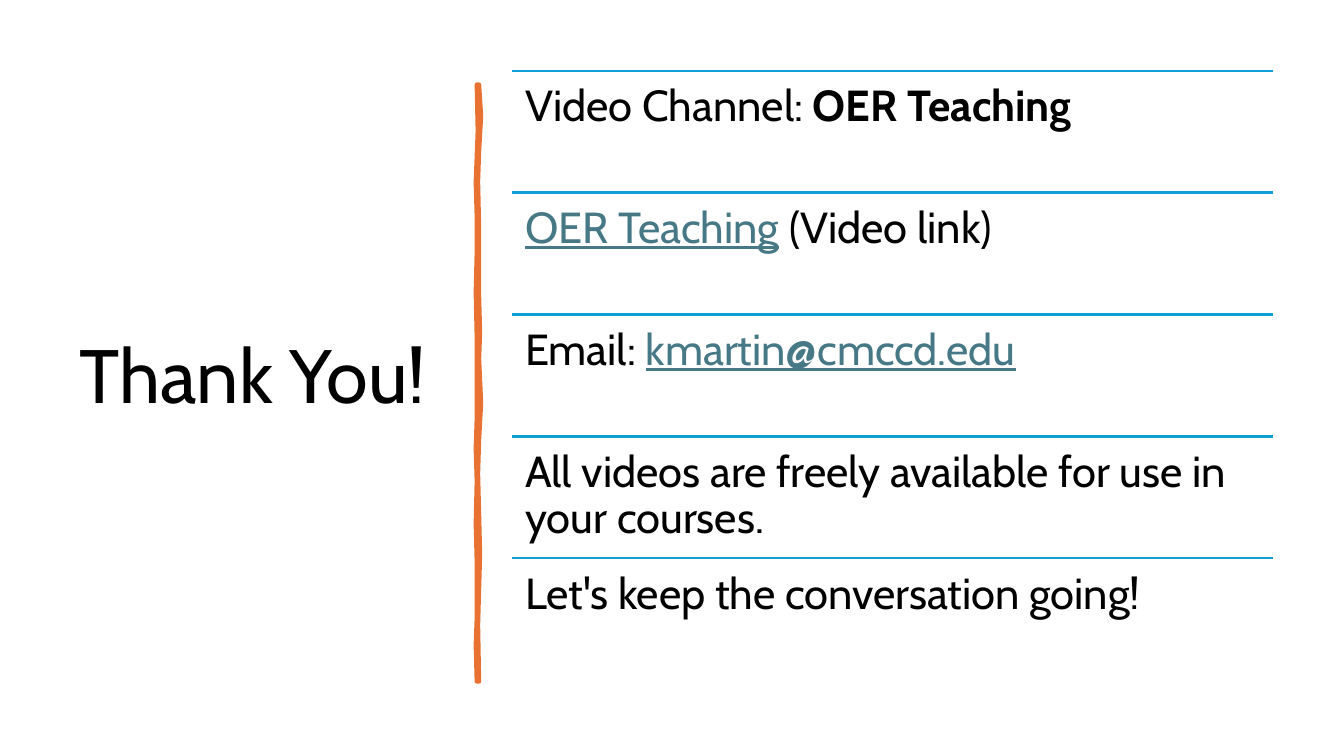
import pptx
import pptx.util
import pptx.dml.color
import pptx.enum.shapes
import pptx.enum.text
import pptx.oxml.ns
import lxml.etree

Inches = pptx.util.Inches
FONT = "Cabin"
BLACK, LINK, BLUE, ORANGE = "000000", "467886", "0F9ED5", "E97132"

# Rows: each is a list of (text, style) pieces
ROWS = [
    [("Video Channel: ", ""), ("OER Teaching", "bold")],
    [("OER Teaching", "link"), (" (Video link)", "")],
    [("Email: ", ""), ("kmartin@cmccd.edu", "link")],
    [("All videos are freely available for use in your courses.", "")],
    [("Let's keep the conversation going!", "")],
]
LEFT, TOP, WIDTH, STEP = 5.08, 0.7, 7.55, 1.21

# Hand-drawn bar: right edge downwards, then left edge upwards
BAR = [
    (4.75, 0.84), (4.77, 1.15), (4.75, 1.5), (4.74, 1.8), (4.75, 2.26),
    (4.75, 2.94), (4.76, 3.3), (4.75, 3.56), (4.77, 4.0), (4.75, 4.36),
    (4.74, 4.7), (4.75, 5.1), (4.76, 5.5), (4.75, 5.84), (4.74, 6.2),
    (4.75, 6.76), (4.73, 6.76), (4.72, 6.4), (4.73, 6.13), (4.73, 5.57),
    (4.72, 5.2), (4.73, 4.77), (4.72, 4.45), (4.73, 4.15), (4.73, 3.35),
    (4.72, 2.9), (4.73, 2.5), (4.73, 2.15), (4.72, 1.81), (4.74, 1.3),
    (4.73, 0.84),
]


def color(code):
    return pptx.dml.color.RGBColor.from_string(code)


def style(run, size, code=BLACK):
    run.font.name = FONT
    run.font.size = pptx.util.Pt(size)
    run.font.color.rgb = color(code)


def add_title(slide, text):
    title = slide.shapes.title
    title.left, title.top = Inches(0.69), Inches(0.7)
    title.width, title.height = Inches(3.74), Inches(6.11)
    frame = title.text_frame
    frame.text = text
    frame.auto_size = pptx.enum.text.MSO_AUTO_SIZE.NONE
    frame.vertical_anchor = pptx.enum.text.MSO_ANCHOR.MIDDLE
    para = frame.paragraphs[0]
    para.alignment = pptx.enum.text.PP_ALIGN.LEFT
    para.line_spacing = 0.9
    style(para.runs[0], 54)


def add_bar(slide):
    points = [(Inches(x), Inches(y)) for x, y in BAR]
    outline = slide.shapes.build_freeform(*points[0])
    outline.add_line_segments(points[1:], close=True)
    bar = outline.convert_to_shape()
    bar.shadow.inherit = False
    bar.fill.solid()
    bar.fill.fore_color.rgb = color(ORANGE)
    bar.line.color.rgb = color(ORANGE)
    bar.line.width = pptx.util.Pt(3.25)
    lxml.etree.SubElement(bar.line._get_or_add_ln(), pptx.oxml.ns.qn("a:round"))


def add_rule(slide, top):
    rule = slide.shapes.add_connector(
        pptx.enum.shapes.MSO_CONNECTOR.STRAIGHT,
        Inches(LEFT), Inches(top), Inches(LEFT + WIDTH), Inches(top))
    rule.line.color.rgb = color(BLUE)
    rule.line.width = pptx.util.Pt(1.5)
    lxml.etree.SubElement(rule._element.spPr, pptx.oxml.ns.qn("a:effectLst"))


def add_row(slide, top, pieces):
    box = slide.shapes.add_textbox(
        Inches(LEFT), Inches(top), Inches(WIDTH), Inches(STEP))
    frame = box.text_frame
    frame.word_wrap = True
    frame.margin_left = frame.margin_right = Inches(0.13)
    frame.margin_top = frame.margin_bottom = Inches(0.13)
    para = frame.paragraphs[0]
    para.line_spacing = 0.9
    for text, kind in pieces:
        run = para.add_run()
        run.text = text
        style(run, 31, LINK if kind == "link" else BLACK)
        run.font.bold = kind == "bold"
        run.font.underline = kind == "link"


def main():
    deck = pptx.Presentation()
    deck.slide_width, deck.slide_height = Inches(13.33), Inches(7.5)
    slide = deck.slides.add_slide(deck.slide_layouts[5])  # title only

    # Left side
    add_title(slide, "Thank You!")
    add_bar(slide)

    # Ruled rows
    for index, pieces in enumerate(ROWS):
        top = TOP + index * STEP
        add_rule(slide, top)
        add_row(slide, top, pieces)

    deck.save("out.pptx")


if __name__ == "__main__":
    main()
